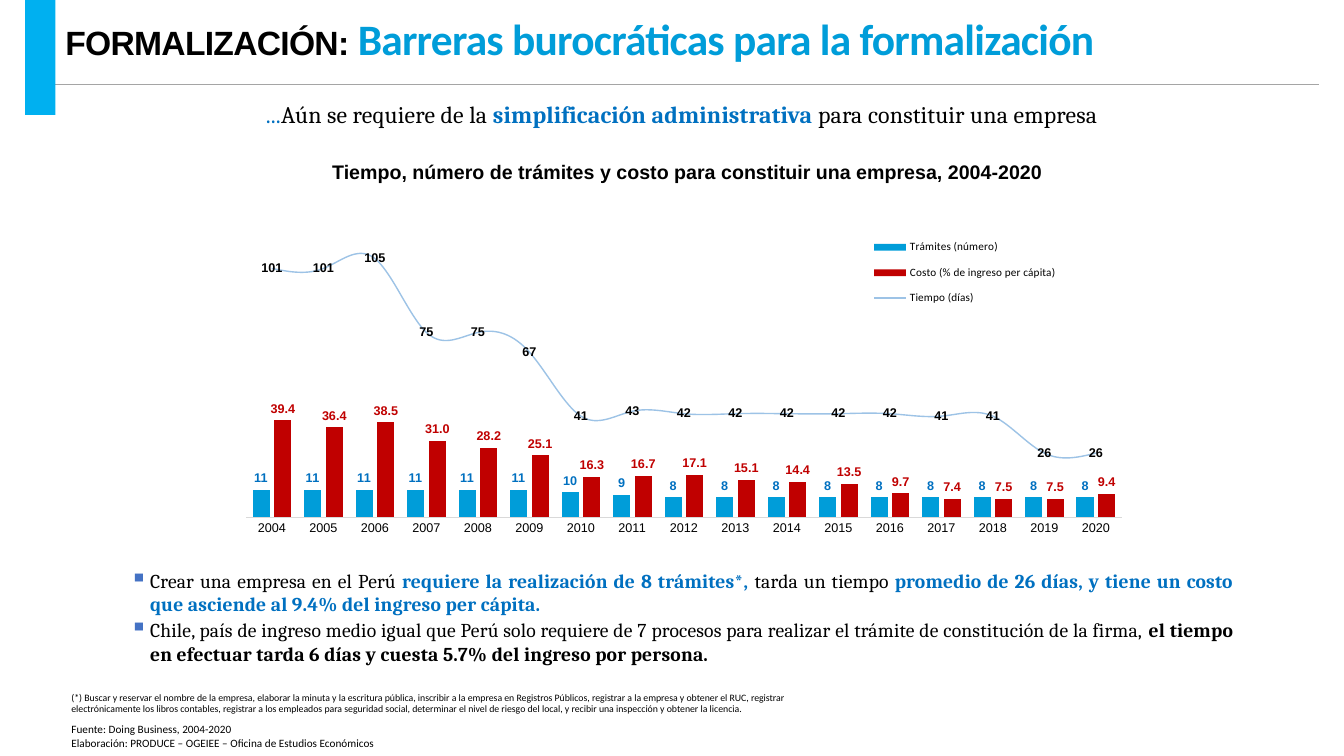
"""Build the slide on bureaucratic barriers to formalization in Peru."""
from lxml import etree
from pptx import Presentation
from pptx.chart.data import CategoryChartData
from pptx.dml.color import RGBColor
from pptx.enum.chart import XL_CHART_TYPE, XL_LABEL_POSITION, XL_LEGEND_POSITION, XL_MARKER_STYLE, XL_TICK_MARK
from pptx.enum.shapes import MSO_CONNECTOR, MSO_SHAPE
from pptx.enum.text import MSO_ANCHOR, PP_ALIGN
from pptx.oxml import parse_xml
from pptx.oxml.ns import nsdecls, qn
from pptx.util import Inches, Pt

LEFT, CENTER, JUSTIFY = PP_ALIGN.LEFT, PP_ALIGN.CENTER, PP_ALIGN.JUSTIFY
OUTSIDE, MIDDLE = XL_LABEL_POSITION.OUTSIDE_END, XL_LABEL_POSITION.CENTER
BLACK, BLUE, RED, CYAN, PALE = "000000", "0070C0", "C00000", "009DD9", "9DC3E6"


def rgb(value):
    return RGBColor.from_string(value)


def add_text(box, paragraphs, size, font, align=LEFT, after=0, tracking=0):
    frame = slide.shapes.add_textbox(*map(Inches, box)).text_frame
    frame.word_wrap = True
    for index, runs in enumerate(paragraphs):
        paragraph = frame.add_paragraph() if index else frame.paragraphs[0]
        paragraph.alignment = align
        paragraph.space_after = Pt(after)
        paragraph.font.size = Pt(size)
        paragraph.font.name = font
        for text, color, bold in runs:
            run = paragraph.add_run()
            run.text = text
            run.font.bold = bold
            run.font.color.rgb = rgb(color)
            if tracking:
                run.font._element.set("spc", str(tracking))
    return frame


prs = Presentation()
prs.slide_width, prs.slide_height = Inches(13.33), Inches(7.5)
slide = prs.slides.add_slide(prs.slide_layouts[6])

rule = slide.shapes.add_connector(
    MSO_CONNECTOR.STRAIGHT, Inches(0.44), Inches(0.84), Inches(13.08), Inches(0.84))
rule.line.color.rgb = rgb("A5A5A5")
rule.line.width = Pt(0.5)
etree.SubElement(rule._element.spPr, qn("a:effectLst"))

accent = slide.shapes.add_shape(MSO_SHAPE.RECTANGLE, Inches(0.25), 0, Inches(0.3), Inches(1.14))
accent.shadow.inherit = False
accent.fill.solid()
accent.fill.fore_color.rgb = rgb("00B0F0")
accent.line.fill.background()

title = add_text(
    (0.55, 0, 11.78, 0.84),
    [[("FORMALIZACIÓN: ", BLACK, True),
      ("Barreras burocráticas para la formalización", CYAN, True)]],
    24, "Arial", tracking=-50)
title.vertical_anchor = MSO_ANCHOR.MIDDLE
title.paragraphs[0].line_spacing = 0.85
topic = title.paragraphs[0].runs[1].font
topic.size, topic.name = Pt(31), "Calibri"

findings = add_text(
    (1.19, 5.59, 11.14, 1.06),
    [[("Crear una empresa en el Perú ", BLACK, False),
      ("requiere la realización de 8 trámites*, ", BLUE, True),
      ("tarda un tiempo ", BLACK, False),
      ("promedio de 26 días, y tiene un costo que asciende al 9.4% del ingreso per cápita. ", BLUE, True)],
     [("Chile, país de ingreso medio igual que Perú solo requiere de 7 procesos para realizar "
       "el trámite de constitución de la firma, ", BLACK, False),
      ("el tiempo en efectuar tarda 6 días y cuesta 5.7% del ingreso por persona. ", BLACK, True)]],
    14, "Cambria", JUSTIFY, after=2, tracking=10)
for finding in findings.paragraphs:
    properties = finding._p.get_or_add_pPr()
    properties.set("marL", str(Inches(0.2)))
    properties.set("indent", str(Inches(-0.2)))
    bullet_color = parse_xml(f'<a:buClr {nsdecls("a")}><a:srgbClr val="4472C4"/></a:buClr>')
    bullet_size = parse_xml(f'<a:buSzPct {nsdecls("a")} val="125000"/>')
    bullet = parse_xml(f'<a:buChar {nsdecls("a")} char="▪"/>')
    for part in (bullet_color, bullet_size, bullet):
        properties.find(qn("a:defRPr")).addprevious(part)

add_text(
    (0.61, 7.12, 4.95, 0.37),
    [[("Fuente: Doing Business, 2004-2020", BLACK, False)],
     [("Elaboración: PRODUCE – OGEIEE – Oficina de Estudios Económicos", BLACK, False)]],
    8, "Calibri")

data = CategoryChartData()
data.categories = [str(year) for year in range(2004, 2021)]
data.add_series("Trámites (número)", [11] * 6 + [10, 9] + [8] * 9)
data.add_series("Costo (% de ingreso per cápita)", [
    39.4, 36.4, 38.5, 31, 28.2, 25.1, 16.3, 16.7, 17.1, 15.1, 14.4, 13.5, 9.7, 7.4, 7.5, 7.5, 9.4])
data.add_series("Tiempo (días)", [
    101, 101, 105, 75, 75, 67, 41, 43, 42, 42, 42, 42, 42, 41, 41, 26, 26])
chart = slide.shapes.add_chart(
    XL_CHART_TYPE.COLUMN_CLUSTERED, Inches(2.26), Inches(1.99), Inches(9.14), Inches(3.49), data).chart
chart.has_title = False
chart.font.size, chart.font.name = Pt(10), "Calibri"
chart.font.color.rgb = rgb(BLACK)

columns = chart.plots[0]
columns.gap_width, columns.overlap = 75, -27
columns.vary_by_categories = False
column_xml = columns._element
line_xml = parse_xml(
    f'<c:lineChart {nsdecls("c")}><c:grouping val="standard"/><c:varyColors val="0"/>'
    '<c:marker val="1"/></c:lineChart>')
days_xml = column_xml.findall(qn("c:ser"))[2]
for bar_setting in days_xml.findall(qn("c:invertIfNegative")):
    days_xml.remove(bar_setting)
line_xml.insert(2, days_xml)
for axis_id in column_xml.findall(qn("c:axId")):
    etree.SubElement(line_xml, qn("c:axId")).set("val", axis_id.get("val"))
column_xml.addnext(line_xml)

steps, cost = chart.plots[0].series
days = chart.plots[1].series[0]
for series, color in ((steps, CYAN), (cost, RED)):
    series.format.fill.solid()
    series.format.fill.fore_color.rgb = rgb(color)
days.smooth = True
days.marker.style = XL_MARKER_STYLE.NONE
days.format.line.color.rgb = rgb(PALE)
days.format.line.width = Pt(1)
for series, color, number_format, position in (
        (steps, BLUE, "#,##0", OUTSIDE), (cost, RED, "#,##0.0", OUTSIDE), (days, BLACK, "#,##0", MIDDLE)):
    labels = series.data_labels
    labels.show_value = True
    labels.number_format, labels.number_format_is_linked = number_format, False
    labels.position = position
    labels.font.size, labels.font.name, labels.font.bold = Pt(9), "Arial", True
    labels.font.color.rgb = rgb(color)

years = chart.category_axis
years.major_tick_mark = XL_TICK_MARK.NONE
years.tick_labels.font.size, years.tick_labels.font.name = Pt(9), "Arial"
years.tick_labels.font.color.rgb = rgb(BLACK)
years.format.line.color.rgb = rgb("D9D9D9")
years.format.line.width = Pt(0.75)
values = chart.value_axis
values.minimum_scale, values.maximum_scale = 0, 120
values.has_major_gridlines = False
values.visible = False

chart.has_legend = True
legend = chart.legend
legend.position = XL_LEGEND_POSITION.BOTTOM
legend.include_in_layout = False
legend.font.size, legend.font.name = Pt(8), "Calibri"
legend.font.color.rgb = rgb(BLACK)
for area, index, target, bounds in (
        (column_xml.getparent(), 0, '<c:layoutTarget val="inner"/>', (0.02, 0.06, 0.95, 0.84)),
        (legend._element, 1, "", (0.68, 0.08, 0.24, 0.25))):
    for old_layout in area.findall(qn("c:layout")):
        area.remove(old_layout)
    modes = '<c:xMode val="edge"/><c:yMode val="edge"/>'
    sizes = "".join(f'<c:{side} val="{share}"/>' for side, share in zip("xywh", bounds))
    area.insert(index, parse_xml(
        f'<c:layout {nsdecls("c")}><c:manualLayout>{target}{modes}{sizes}</c:manualLayout></c:layout>'))

add_text(
    (1.19, 0.94, 11.14, 0.41),
    [[("...", BLUE, False), ("Aún se requiere de la ", BLACK, False),
      ("simplificación administrativa ", BLUE, True), ("para constituir una empresa", BLACK, False)]],
    17, "Cambria", CENTER, after=2, tracking=10)
add_text(
    (2.67, 1.54, 8.3, 0.34),
    [[("Tiempo, número de trámites y costo para constituir una empresa, 2004-2020", BLACK, True)]],
    14, "Arial", CENTER)
add_text(
    (0.61, 6.81, 7.4, 0.34),
    [[("(*) Buscar y reservar el nombre de la empresa, elaborar la minuta y la escritura pública, "
       "inscribir a la empresa en Registros Públicos, registrar a la empresa y obtener el RUC, "
       "registrar electrónicamente los libros contables, registrar a los empleados para seguridad social, "
       "determinar el nivel de riesgo del local, y recibir una inspección y obtener la licencia.", BLACK, False)]],
    7, "Calibri")

prs.save("out.pptx")
